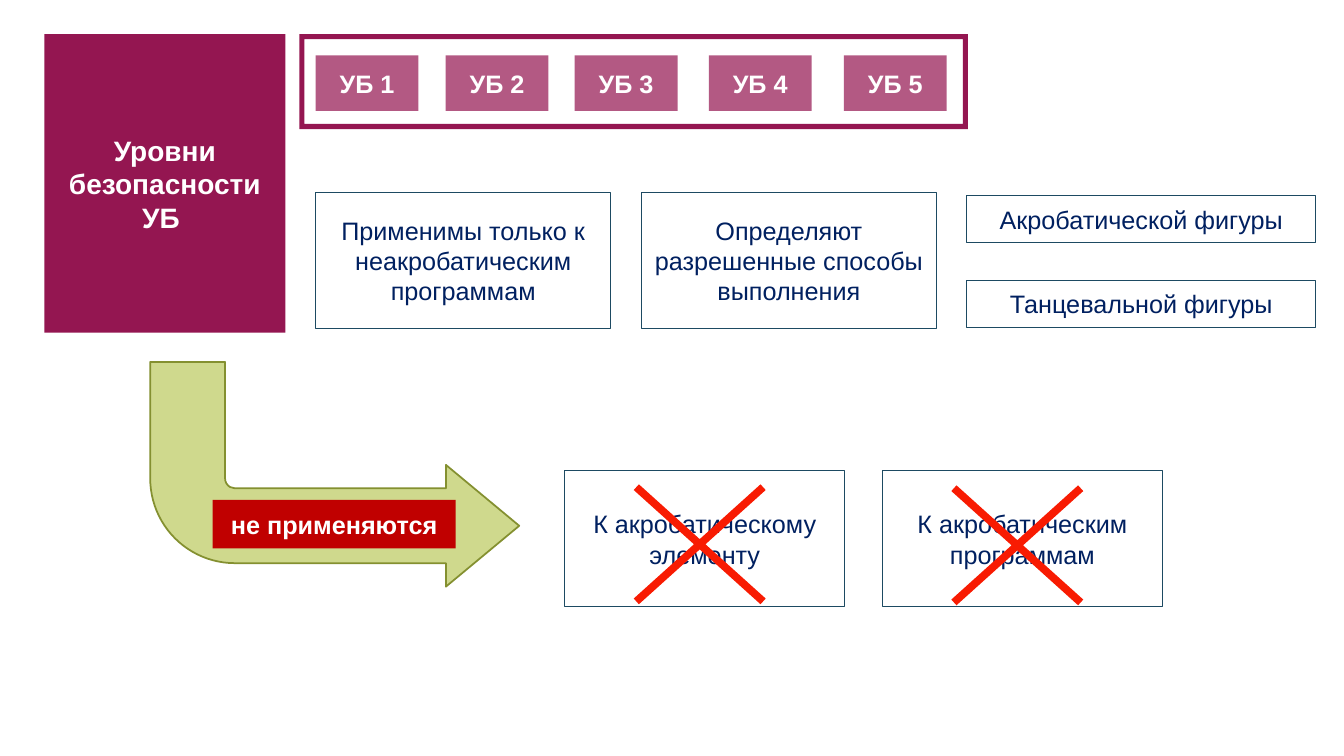
"""Build the slide on safety levels and where they apply."""
from lxml import etree
from pptx import Presentation
from pptx.dml.color import RGBColor
from pptx.enum.shapes import MSO_SHAPE as Preset
from pptx.enum.text import MSO_ANCHOR as Anchor, PP_ALIGN as Align
from pptx.oxml.ns import qn
from pptx.util import Inches, Pt

PLUM, NAVY, TEAL, WHITE = "941651", "002060", "1D4A62", "FFFFFF"


def color(value):
    return RGBColor.from_string(value)


def add_figure(place, text="", preset=Preset.RECTANGLE, fill=None, line=None,
               width=0.75, size=18, ink=WHITE, bold=True, adjust=()):
    shape = page.shapes.add_shape(preset, *[Inches(length) for length in place])
    shape.shadow.inherit = False
    for index, value in enumerate(adjust):
        shape.adjustments[index] = value
    if fill:
        shape.fill.solid()
        shape.fill.fore_color.rgb = color(fill)
    else:
        shape.fill.background()
    if line:
        shape.line.color.rgb = color(line)
        shape.line.width = Pt(width)
    else:
        shape.line.fill.background()
    if text:
        frame = shape.text_frame
        frame.word_wrap = True
        frame.vertical_anchor = Anchor.MIDDLE
        frame.text = text
        for para in frame.paragraphs:
            para.alignment = Align.CENTER
            for span in para.runs:
                span.font.name = "Arial"
                span.font.size = Pt(size)
                span.font.bold = bold
                span.font.color.rgb = color(ink)
    return shape


deck = Presentation()
deck.slide_width, deck.slide_height = Inches(13.33), Inches(7.5)
page = deck.slides.add_slide(deck.slide_layouts[6])

add_figure((0.44, 0.34, 2.39, 2.96), "Уровни безопасности\nУБ ", fill=PLUM, size=20)

outlined_boxes = [
    ((3.13, 1.91, 2.93, 1.35), "Применимы только к неакробатическим программам"),
    ((6.36, 1.91, 2.93, 1.35), "Определяют разрешенные способы выполнения"),
    ((9.59, 1.94, 3.46, 0.47), "Акробатической фигуры"),
    ((9.59, 2.78, 3.46, 0.47), "Танцевальной фигуры"),
    ((5.6, 4.67, 2.78, 1.35), "К акробатическому элементу"),
    ((8.75, 4.67, 2.78, 1.35), "К акробатическим программам"),
]
for place, text in outlined_boxes:
    add_figure(place, text, line=TEAL, ink=NAVY, bold=False)

for number, left in enumerate((3.13, 4.42, 5.7, 7.03, 8.37), start=1):
    level = add_figure((left, 0.55, 1.02, 0.55), f"УБ {number}", fill=PLUM)
    tint = level.element.spPr.find(qn("a:solidFill")).find(qn("a:srgbClr"))
    etree.SubElement(tint, qn("a:alpha")).set("val", "71000")

add_figure((2.97, 0.34, 6.63, 0.94), preset=Preset.FRAME, fill=PLUM, adjust=[0.053])

arrow = add_figure((1.49, 3.59, 3.66, 2.23), preset=Preset.BENT_ARROW, fill="CFD98D",
                   line="849030", width=1.25, adjust=[0.333, 0.271, 0.326, 0.377])
arrow.rotation = 180
arrow.element.spPr.find(qn("a:xfrm")).set("flipH", "1")

for left, top in ((5.73, 4.31), (8.88, 4.32)):
    add_figure((left, top, 2.42, 2.18), preset=Preset.MATH_MULTIPLY,
               fill="F81B02", adjust=[0.035])

add_figure((2.11, 4.96, 2.41, 0.48), "не применяются", fill="C00000")

deck.save("out.pptx")
